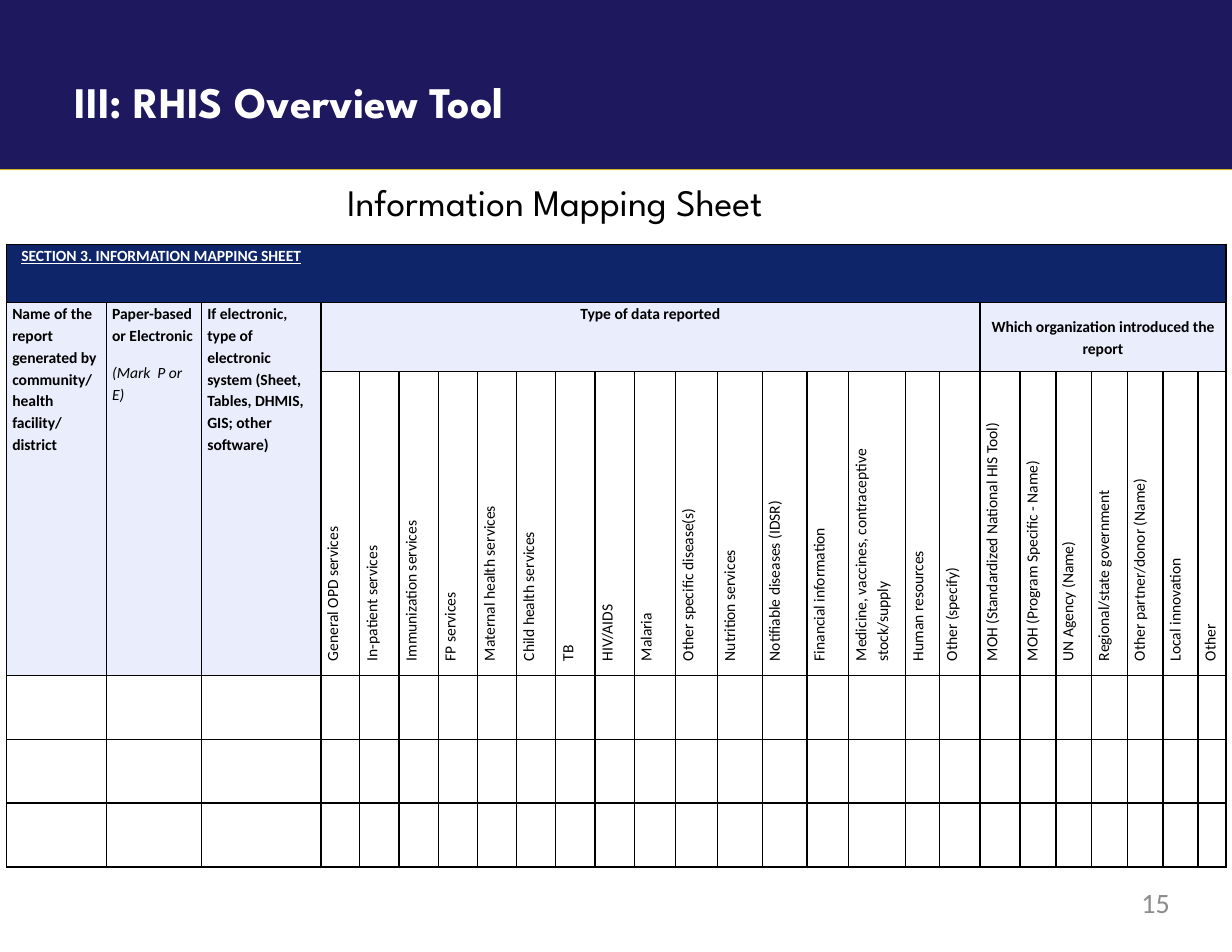
from pptx import Presentation
from pptx.dml.color import RGBColor
from pptx.enum import shapes, text
from pptx.oxml import parse_xml
from pptx.oxml import ns
from pptx.util import Pt

NAVY = RGBColor(0x1E, 0x18, 0x5F)
GOLD = RGBColor(0xEC, 0xCE, 0x18)
SECTION_BLUE = RGBColor(0x0E, 0x25, 0x6A)
PALE_BLUE = RGBColor(0xEA, 0xEE, 0xFC)
GREY = RGBColor(0x8C, 0x8C, 0x8C)
WHITE = RGBColor(0xFF, 0xFF, 0xFF)
BLACK = RGBColor(0, 0, 0)

HEADING_FONT = "League Spartan"
BODY_FONT = "Calibri"

DATA_TYPES = [
    "General OPD services", "In-patient services", "Immunization services",
    "FP services", "Maternal health services", "Child health services", "TB",
    "HIV/AIDS", "Malaria", "Other specific disease(s)", "Nutrition services",
    "Notifiable diseases (IDSR)", "Financial information",
    "Medicine, vaccines, contraceptive stock/supply", "Human resources",
    "Other (specify)",
]
TOP_ANCHORED = DATA_TYPES[11:15]
ORGANIZATIONS = [
    "MOH (Standardized National HIS Tool)", "MOH (Program Specific - Name)",
    "UN Agency (Name)", "Regional/state government",
    "Other partner/donor (Name)", "Local innovation", "Other",
]
REPORT_HEADS = [
    ["Name of the report generated by community/ health facility/ district"],
    ["Paper-based or Electronic", "(Mark  P or E)"],
    ["If electronic, type of electronic system (Sheet, Tables, DHMIS, GIS; "
     "other software)"],
]

COL_WIDTHS = ([64.2, 61.2, 76.4] + [25.2] * 8
              + [26.8, 26.8, 28.8, 28.8, 26.8, 36.7, 21.7, 25.9]
              + [25.9] + [23] * 4 + [22.4, 18])
ROW_HEIGHTS = [37.4, 44.6, 173.5, 41, 41, 41]
FIRST_TYPE = len(REPORT_HEADS)
FIRST_ORG = FIRST_TYPE + len(DATA_TYPES)
GROUP_EDGES = (FIRST_TYPE, FIRST_ORG, len(COL_WIDTHS))


def write(p, content, size=10, font=BODY_FONT, color=BLACK, bold=False,
          italic=False, underline=False, align=None, spacing=None, after=None,
          indent=None):
    r = p.add_run()
    r.text = content
    f = r.font
    f.name, f.size, f.bold, f.italic = font, Pt(size), bold, italic
    f.underline = underline
    f.color.rgb = color
    p.alignment = align
    p.line_spacing = spacing
    if after is not None:
        p.space_after = Pt(after)
    if indent is not None:
        p_pr = p._p.get_or_add_pPr()
        p_pr.set("marL", str(Pt(indent)))
        p_pr.set("indent", "0")


def clear_insets(tf):
    tf.margin_left = tf.margin_right = tf.margin_top = tf.margin_bottom = 0


def add_header(s, left, top, width, height):
    title = s.shapes.title
    for offset, color in ((0, GOLD), (-0.7, NAVY)):
        band = s.shapes.add_shape(shapes.MSO_SHAPE.RECTANGLE, Pt(left),
                                  Pt(top + offset), Pt(width), Pt(height))
        band.shadow.inherit = False
        band.fill.solid()
        band.fill.fore_color.rgb = color
        band.line.fill.background()
        title.element.addprevious(band.element)

    title.left, title.top = Pt(left + 48), Pt(top + 48)
    title.width, title.height = Pt(336), Pt(34)
    tf = title.text_frame
    clear_insets(tf)
    tf.word_wrap = True
    tf.auto_size = text.MSO_AUTO_SIZE.NONE
    tf.vertical_anchor = text.MSO_ANCHOR.TOP
    write(tf.paragraphs[0], "III: RHIS Overview Tool", size=28,
          font=HEADING_FONT, color=WHITE, bold=True, align=text.PP_ALIGN.LEFT)


def add_subtitle(s, left, top, width, height):
    tf = s.shapes.add_textbox(Pt(left), Pt(top), Pt(width), Pt(height)).text_frame
    tf.word_wrap = False
    write(tf.paragraphs[0], "Information Mapping Sheet", size=24,
          font=HEADING_FONT)


def add_page_number(s, left, top, width, height):
    tf = s.shapes.add_textbox(Pt(left), Pt(top), Pt(width), Pt(height)).text_frame
    clear_insets(tf)
    tf.word_wrap = True
    write(tf.paragraphs[0], "15", size=18, color=GREY, align=text.PP_ALIGN.RIGHT)


def set_borders(cell, left, right):
    """Draw all four sides, with the given widths for the vertical ones."""
    tc_pr = cell._tc.get_or_add_tcPr()
    sides = (("lnL", left), ("lnR", right), ("lnT", 1), ("lnB", 1))
    for i, (side, width) in enumerate(sides):
        tc_pr.insert(i, parse_xml(
            f'<a:{side} {ns.nsdecls("a")} w="{Pt(width)}"><a:solidFill>'
            f'<a:srgbClr val="{BLACK}"/></a:solidFill></a:{side}>'))


def fill_cell(cell, lines, fill=None, middle=False, vertical=False, **fmt):
    cell.margin_left = cell.margin_right = Pt(3.6)
    cell.margin_top = cell.margin_bottom = 0
    if middle:
        cell.vertical_anchor = text.MSO_ANCHOR.MIDDLE
    if vertical:
        cell._tc.get_or_add_tcPr().set("vert", "vert270")
    if fill is not None:
        cell.fill.solid()
        cell.fill.fore_color.rgb = fill
    tf = cell.text_frame
    for i, line in enumerate(lines):
        p = tf.add_paragraph() if i else tf.paragraphs[0]
        note = line.startswith("(")
        write(p, line, spacing=1.15, **{"italic": note, "bold": not note, **fmt})


def add_mapping_table(s, left, top):
    rows, cols = len(ROW_HEIGHTS), len(COL_WIDTHS)
    table = s.shapes.add_table(rows, cols, Pt(left), Pt(top),
                               Pt(sum(COL_WIDTHS)), Pt(sum(ROW_HEIGHTS))).table
    table.first_row = table.horz_banding = False
    for column, width in zip(table.columns, COL_WIDTHS):
        column.width = Pt(width)
    for row, height in zip(table.rows, ROW_HEIGHTS):
        row.height = Pt(height)

    for r in range(rows):
        for c in range(cols):
            cell = table.cell(r, c)
            cell.fill.background()
            set_borders(cell, *(1.5 if r and edge in GROUP_EDGES else 1
                                for edge in (c, c + 1)))

    table.cell(0, 0).merge(table.cell(0, cols - 1))
    fill_cell(table.cell(0, 0), ["SECTION 3. INFORMATION MAPPING SHEET"],
              fill=SECTION_BLUE, color=WHITE, underline=True, indent=5.76)

    for c, lines in enumerate(REPORT_HEADS):
        table.cell(1, c).merge(table.cell(2, c))
        fill_cell(table.cell(1, c), lines, fill=PALE_BLUE, after=10)

    groups = ((FIRST_TYPE, "Type of data reported", DATA_TYPES, False),
              (FIRST_ORG, "Which organization introduced the report",
               ORGANIZATIONS, True))
    for first, heading, names, middle in groups:
        table.cell(1, first).merge(table.cell(1, first + len(names) - 1))
        fill_cell(table.cell(1, first), [heading], fill=PALE_BLUE,
                  middle=middle, align=text.PP_ALIGN.CENTER)
        for c, name in enumerate(names, first):
            fill_cell(table.cell(2, c), [name], vertical=True, bold=False,
                      middle=name not in TOP_ANCHORED, indent=5.76)


def main():
    prs = Presentation()
    prs.slide_width, prs.slide_height = Pt(792), Pt(612)
    s = prs.slides.add_slide(prs.slide_layouts[5])
    add_header(s, 0, 0, 792, 109.4)
    add_subtitle(s, 216, 111.6, 336, 36)
    add_mapping_table(s, 4.3, 157)
    add_page_number(s, 570, 569.5, 182, 30)
    prs.save("out.pptx")


if __name__ == "__main__":
    main()
